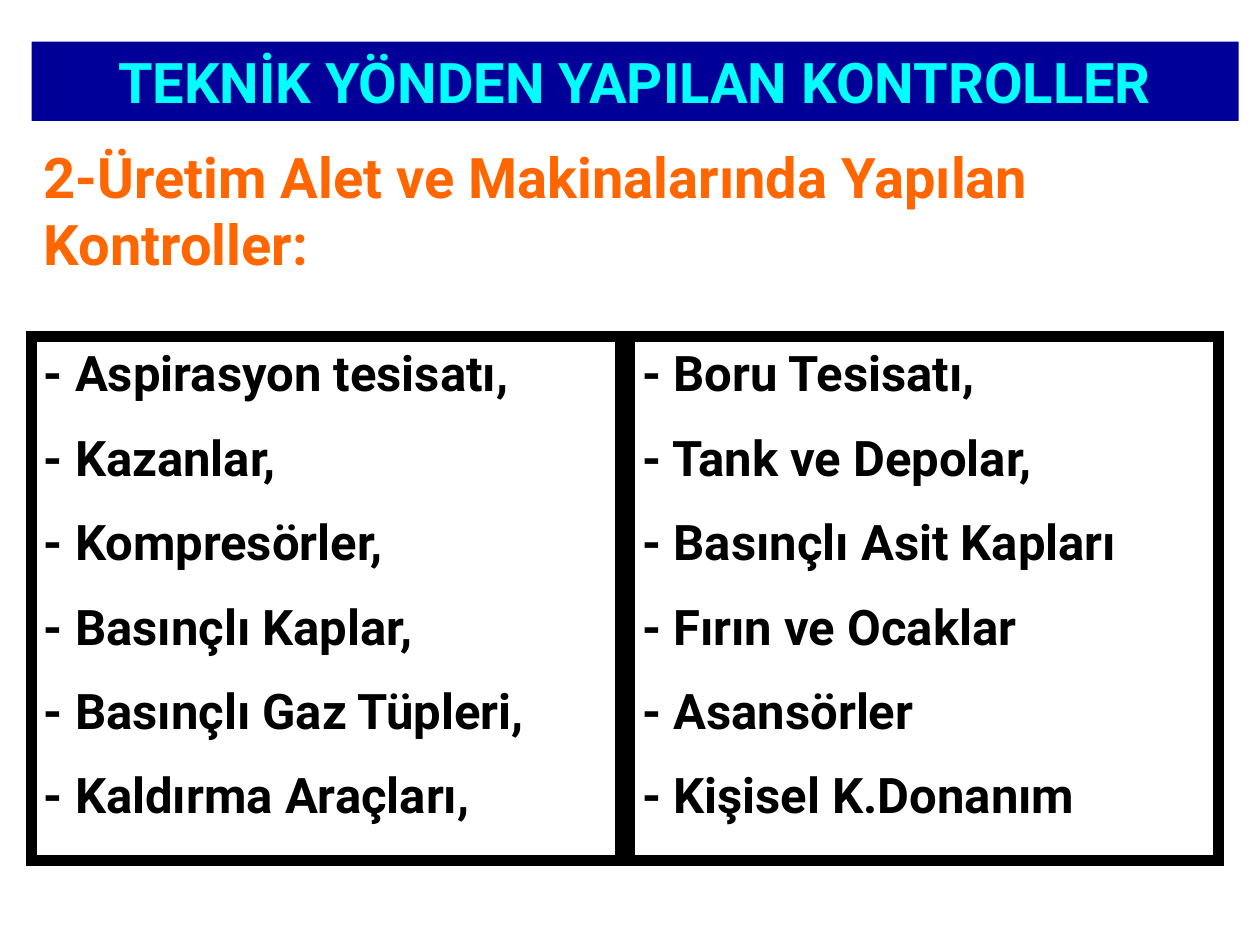
from dataclasses import dataclass

from lxml.etree import SubElement
from pptx import Presentation
from pptx.dml.color import RGBColor as RGB
from pptx.enum.shapes import MSO_SHAPE as Shape
from pptx.enum.text import MSO_ANCHOR as Anchor, MSO_AUTO_SIZE as AutoSize, PP_ALIGN as Align
from pptx.oxml.ns import qn
from pptx.util import Inches, Pt


@dataclass(frozen=True)
class Theme:
    font: str = "Roboto"
    bar: RGB = RGB(0x00, 0x00, 0x99)
    title: RGB = RGB(0x00, 0xFF, 0xFF)
    heading: RGB = RGB(0xFF, 0x66, 0x00)
    ink: RGB = RGB(0x00, 0x00, 0x00)
    heading_size: Pt = Pt(32)
    list_size: Pt = Pt(28)
    list_gap: Pt = Pt(14.65)
    border: Pt = Pt(6)


THEME = Theme()

LEFT_CHECKS = (
    "- Aspirasyon tesisatı,",
    "- Kazanlar,",
    "- Kompresörler,",
    "- Basınçlı Kaplar,",
    "- Basınçlı Gaz Tüpleri,",
    "- Kaldırma Araçları,",
)
RIGHT_CHECKS = (
    "- Boru Tesisatı,",
    "- Tank ve Depolar,",
    "- Basınçlı Asit Kapları",
    "- Fırın ve Ocaklar",
    "- Asansörler",
    "- Kişisel K.Donanım",
)


def write(frame, lines, size, color, align=Align.LEFT, anchor=Anchor.TOP, gap=Pt(0)):
    settings = {
        "word_wrap": True,
        "auto_size": AutoSize.NONE,
        "vertical_anchor": anchor,
        "margin_left": Inches(0.1),
        "margin_right": Inches(0.1),
        "margin_top": Inches(0.05),
        "margin_bottom": Inches(0.05),
    }
    for name, value in settings.items():
        setattr(frame, name, value)
    for index, line in enumerate(lines):
        paragraph = frame.paragraphs[0] if index == 0 else frame.add_paragraph()
        paragraph.alignment = align
        paragraph.space_before = gap if index else Pt(0)
        run = paragraph.add_run()
        run.text = line
        font = run.font
        font.name, font.size, font.bold = THEME.font, size, True
        font.color.rgb = color


def add_title_bar(slide, left, top, width, height):
    title = slide.shapes.title
    title.left, title.top, title.width, title.height = left, top, width, height
    title.fill.solid()
    title.fill.fore_color.rgb = THEME.bar
    write(title.text_frame, ["TEKNİK YÖNDEN YAPILAN KONTROLLER"],
          THEME.heading_size, THEME.title, Align.CENTER, Anchor.MIDDLE)


def add_heading(slide, left, top, width, height):
    heading = slide.shapes.add_textbox(left, top, width, height)
    write(heading.text_frame, ["2-Üretim Alet ve Makinalarında Yapılan Kontroller:"],
          THEME.heading_size, THEME.heading)


def add_check_list(slide, checks, left, top, width, height):
    panel = slide.shapes.add_shape(Shape.RECTANGLE, left, top, width, height)
    panel.shadow.inherit = False
    panel.fill.background()
    panel.line.color.rgb = THEME.ink
    panel.line.width = THEME.border
    SubElement(panel.line._get_or_add_ln(), qn("a:miter"), lim="800000")
    write(panel.text_frame, checks, THEME.list_size, THEME.ink, gap=THEME.list_gap)


def main():
    deck = Presentation()
    deck.slide_width, deck.slide_height = Inches(10), Inches(7.5)
    slide = deck.slides.add_slide(deck.slide_layouts.get_by_name("Title Only"))

    left = Inches(0.25)
    add_title_bar(slide, left, Inches(0.33), Inches(9.58), Inches(0.63))
    add_heading(slide, left, Inches(1.08), Inches(9.5), Inches(1.77))

    pitch = Inches(4.75)
    for column, checks in enumerate((LEFT_CHECKS, RIGHT_CHECKS)):
        add_check_list(slide, checks, left + column * pitch, Inches(2.67),
                       Inches(4.67), Inches(4.16))

    deck.save("out.pptx")


if __name__ == "__main__":
    main()
